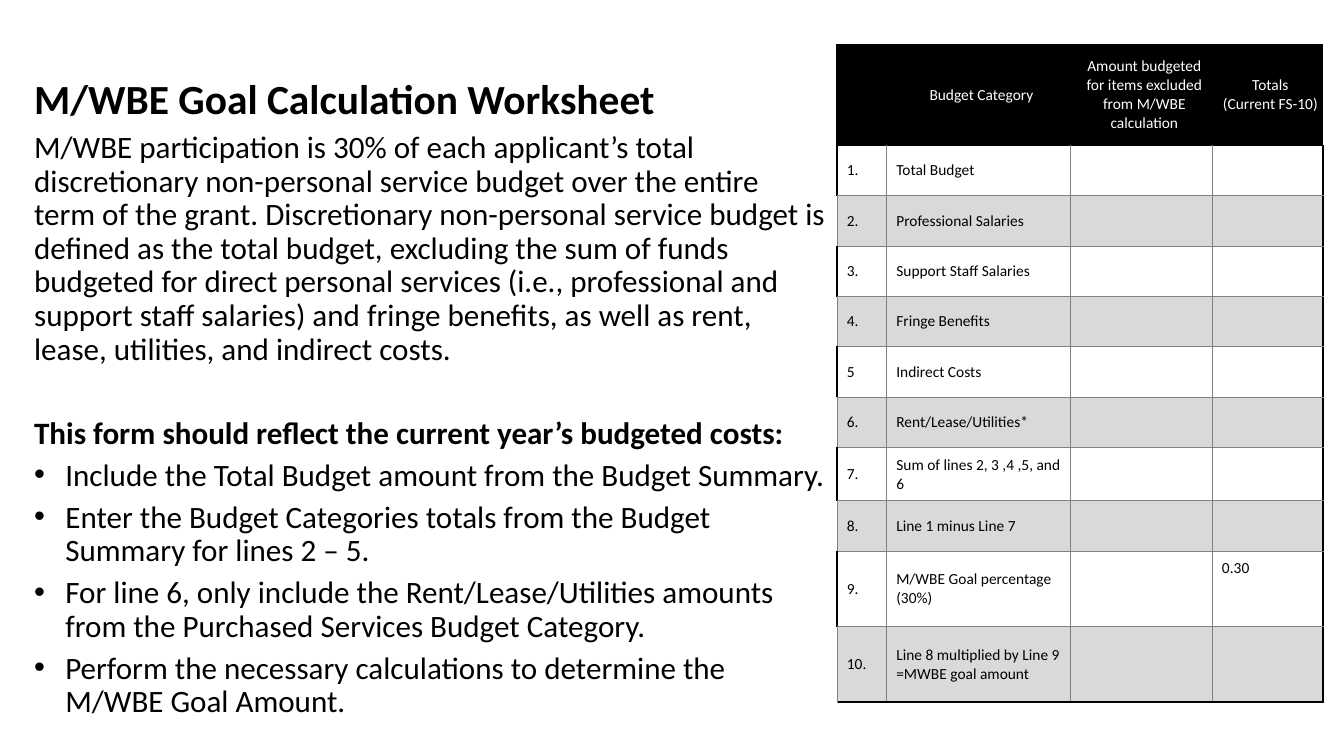
from dataclasses import dataclass

from lxml.etree import SubElement
from pptx import Presentation
from pptx.dml.color import RGBColor
from pptx.enum.text import MSO_ANCHOR, PP_ALIGN
from pptx.oxml.ns import qn
from pptx.slide import Slide
from pptx.table import Table, _Cell
from pptx.text.text import TextFrame, _Paragraph
from pptx.util import Inches, Pt

FONT = "Calibri"
BLACK, WHITE, GREY, BAND = "000000", "FFFFFF", "808080", "D9D9D9"
WIDTHS = [0.49, 1.83, 1.4, 1.1]
THIN, HEAVY = (GREY, 0.5), (BLACK, 1.5)
HEAD_EDGE = (BLACK, 1)


@dataclass
class Para:
    text: str
    size: float = 22.2
    bold: bool = False
    bullet: bool = False
    before: float = 0


@dataclass
class Row:
    mark: str
    label: str
    height: float = 0.5
    total: str = ""


PARAS = [
    Para("M/WBE Goal Calculation Worksheet", size=29.6, bold=True),
    Para("M/WBE participation is 30% of each applicant’s total discretionary "
         "non-personal service budget over the entire term of the grant. "
         "Discretionary non-personal service budget is defined as the total "
         "budget, excluding the sum of funds budgeted for direct personal "
         "services (i.e., professional and support staff salaries) and fringe "
         "benefits, as well as rent, lease, utilities, and indirect costs."),
    Para("This form should reflect the current year’s budgeted costs:",
         bold=True, before=30),
    Para("Include the Total Budget amount from the Budget Summary.", bullet=True),
    Para("Enter the Budget Categories totals from the Budget Summary "
         "for lines 2 – 5.", bullet=True),
    Para("For line 6, only include the Rent/Lease/Utilities amounts from the "
         "Purchased Services Budget Category.", bullet=True),
    Para("Perform the necessary calculations to determine the M/WBE Goal "
         "Amount.", bullet=True),
]

HEADS = [
    [],
    ["Budget Category"],
    ["Amount budgeted for items excluded from M/WBE calculation"],
    ["Totals", "(Current FS-10)"],
]

ROWS = [
    Row("1.", "Total Budget"),
    Row("2.", "Professional Salaries"),
    Row("3.", "Support Staff Salaries"),
    Row("4.", "Fringe Benefits"),
    Row("5", "Indirect Costs"),
    Row("6.", "Rent/Lease/Utilities*"),
    Row("7.", "Sum of lines 2, 3 ,4 ,5, and 6"),
    Row("8.", "Line 1 minus Line 7"),
    Row("9.", "M/WBE Goal percentage (30%)", 0.75, "0.30"),
    Row("10.", "Line 8 multiplied by Line 9 =MWBE goal amount", 0.75),
]


def color(code: str) -> RGBColor:
    return RGBColor.from_string(code)


def next_para(frame: TextFrame, index: int) -> _Paragraph:
    """Use the paragraph a frame starts with, then add more."""
    return frame.add_paragraph() if index else frame.paragraphs[0]


def add_run(para: _Paragraph, text: str, size: float, ink: str,
            bold: bool = False) -> None:
    run = para.add_run()
    run.text = text
    run.font.name = FONT
    run.font.size = Pt(size)
    run.font.bold = bold
    run.font.color.rgb = color(ink)


def add_bullet(para: _Paragraph) -> None:
    props = para._p.get_or_add_pPr()
    props.set("marL", str(Inches(0.31)))
    props.set("indent", str(-Inches(0.31)))
    SubElement(props, qn("a:buFont"), typeface="Arial")
    SubElement(props, qn("a:buChar"), char="•")


def add_guide(slide: Slide) -> None:
    box = slide.shapes.add_textbox(
        Inches(0.24), Inches(0.44), Inches(8.06), Inches(6.93))
    frame = box.text_frame
    frame.word_wrap = True
    frame.margin_top = Inches(0.34)
    for index, item in enumerate(PARAS):
        para = next_para(frame, index)
        para.line_spacing = 0.9
        para.space_before = Pt(item.before)
        para.space_after = Pt(6)
        if item.bullet:
            add_bullet(para)
        add_run(para, item.text, item.size, BLACK, item.bold)


def set_edges(cell: _Cell, **edges: tuple[str, float]) -> None:
    props = cell._tc.get_or_add_tcPr()
    for side in "LRTB":
        ink, width = edges.get(side, THIN)
        line = SubElement(props, qn(f"a:ln{side}"), w=str(Pt(width)))
        fill = SubElement(line, qn("a:solidFill"))
        SubElement(fill, qn("a:srgbClr"), val=ink)


def fill_cell(cell: _Cell, texts: list[str], ink: str, align: PP_ALIGN,
              anchor: MSO_ANCHOR = MSO_ANCHOR.MIDDLE) -> None:
    cell.vertical_anchor = anchor
    cell.margin_left, cell.margin_right = Inches(0.1), Inches(0.04)
    cell.margin_top = cell.margin_bottom = Inches(0.08)
    for index, text in enumerate(texts):
        para = next_para(cell.text_frame, index)
        para.alignment = align
        add_run(para, text, 11, ink)


def fill_head(table: Table) -> None:
    for col, texts in enumerate(HEADS):
        cell = table.cell(0, col)
        set_edges(cell, **dict.fromkeys("LRTB", HEAD_EDGE))
        cell.fill.solid()
        cell.fill.fore_color.rgb = color(BLACK)
        fill_cell(cell, texts, WHITE, PP_ALIGN.CENTER)


def fill_row(table: Table, number: int, row: Row) -> None:
    shaded = number % 2 == 0
    last = len(WIDTHS) - 1
    for col, text in enumerate([row.mark, row.label, "", row.total]):
        cell = table.cell(number, col)
        set_edges(
            cell,
            L=HEAVY if col == 0 and not shaded else THIN,
            R=HEAVY if col == last else THIN,
            T=HEAD_EDGE if number == 1 else THIN,
            B=HEAVY if number == len(ROWS) else THIN)
        if shaded:
            cell.fill.solid()
            cell.fill.fore_color.rgb = color(BAND)
        else:
            cell.fill.background()
        anchor = MSO_ANCHOR.TOP if col == last else MSO_ANCHOR.MIDDLE
        fill_cell(cell, [text] if text else [], BLACK, PP_ALIGN.LEFT, anchor)


def add_budget(slide: Slide) -> None:
    heights = [1] + [row.height for row in ROWS]
    table = slide.shapes.add_table(
        len(heights), len(WIDTHS), Inches(8.3), Inches(0.44),
        Inches(sum(WIDTHS)), Inches(sum(heights))).table
    table.first_row = table.horz_banding = False
    for col, width in zip(table.columns, WIDTHS):
        col.width = Inches(width)
    for line, height in zip(table.rows, heights):
        line.height = Inches(height)
    fill_head(table)
    for number, row in enumerate(ROWS, 1):
        fill_row(table, number, row)


def main() -> None:
    deck = Presentation()
    deck.slide_width, deck.slide_height = Inches(13.33), Inches(7.5)
    slide = deck.slides.add_slide(deck.slide_layouts[6])
    add_guide(slide)
    add_budget(slide)
    deck.save("out.pptx")


if __name__ == "__main__":
    main()
